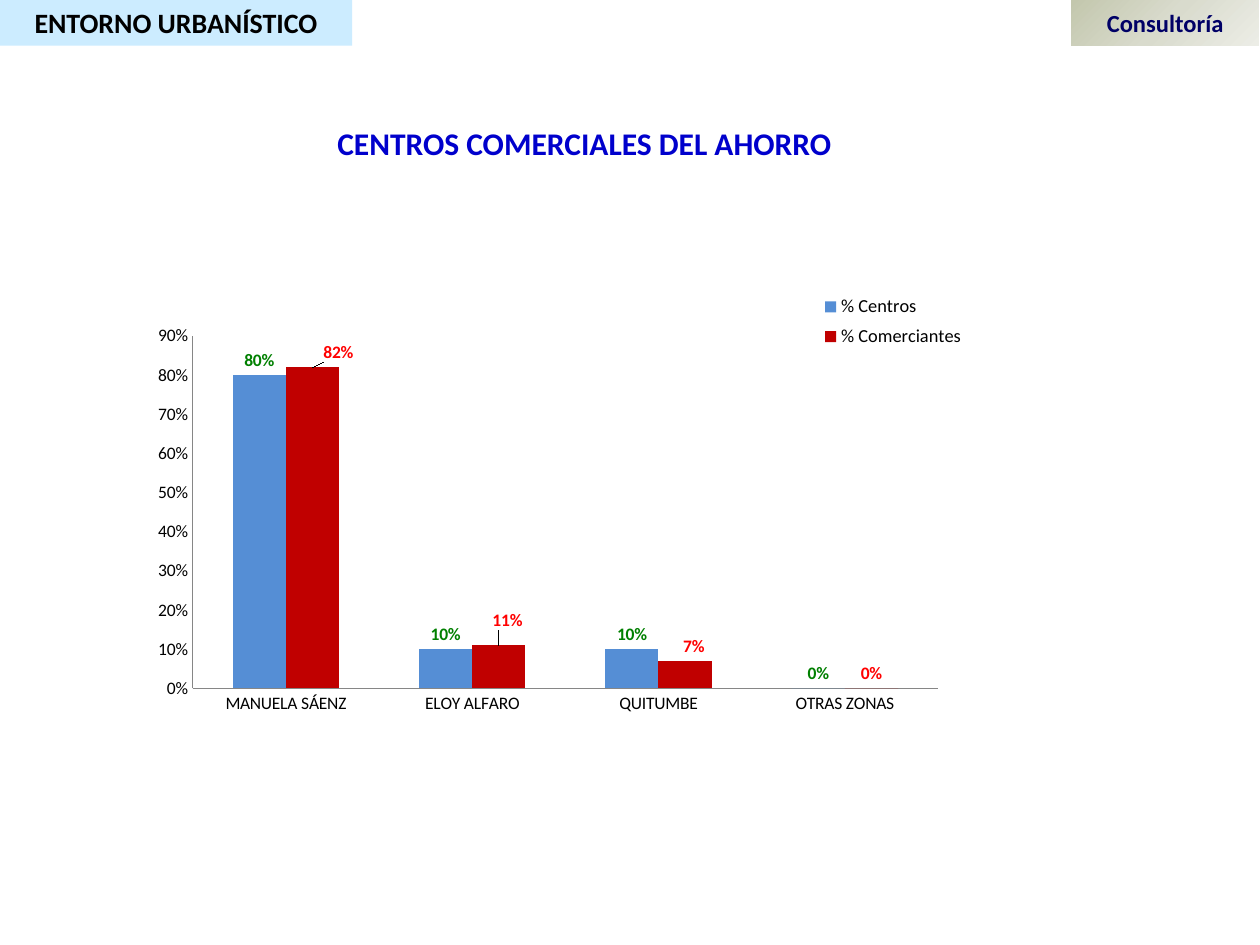
from lxml import etree
from pptx import Presentation, util as u
from pptx.chart.data import CategoryChartData
from pptx.dml.color import RGBColor
from pptx.enum import chart as charts, shapes, text
from pptx.oxml import parse_xml
from pptx.oxml.ns import qn

FONT = "Calibri"
CATEGORIES = ["MANUELA SÁENZ", "ELOY ALFARO", "QUITUMBE", "OTRAS ZONAS"]
SERIES = [
    ("% Centros", [0.8, 0.1, 0.1, 0], "558ED5", "008000"),
    ("% Comerciantes", [0.82, 0.11, 0.07, 0], "C00000", "FF0000"),
]
LABEL_OFFSETS = [(0.03, 0), (0.01, -0.02), (0.01, 0)]


def color(value):
    """Turn a hex string into a colour."""
    return RGBColor.from_string(value)


def style_font(font, size, value, bold=False):
    """Set the face, size, colour and weight of a font."""
    font.name, font.size, font.bold = FONT, u.Pt(size), bold
    font.color.rgb = color(value)


def place(shape, box):
    """Move a shape to a box given in centimetres."""
    shape.left, shape.top, shape.width, shape.height = map(u.Cm, box)


def write(shape, wording, size, value):
    """Write one bold centred line in the middle of a shape."""
    frame = shape.text_frame
    frame.word_wrap = True
    frame.auto_size = text.MSO_AUTO_SIZE.NONE
    frame.vertical_anchor = text.MSO_ANCHOR.MIDDLE
    paragraph = frame.paragraphs[0]
    paragraph.alignment = text.PP_ALIGN.CENTER
    run = paragraph.add_run()
    run.text = wording
    style_font(run.font, size, value, True)


def add_title(slide, box):
    """Place the heading in the title placeholder."""
    title = slide.shapes.title
    place(title, box)
    write(title, "CENTROS COMERCIALES DEL AHORRO", 18, "0000CC")


def add_banner(slide, box, wording, size, text_color, fill):
    """Add a borderless label along the top edge."""
    banner = slide.shapes.add_shape(shapes.MSO_SHAPE.RECTANGLE, *map(u.Cm, box))
    banner.shadow.inherit = False
    banner.fill.solid()
    banner.fill.fore_color.rgb = color(fill)
    banner.line.fill.background()
    write(banner, wording, size, text_color)
    return banner


def set_radial_gradient(shape, stops):
    """Replace the solid fill with a gradient spreading from the top left."""
    solid = shape.element.spPr.find(qn("a:solidFill"))
    marks = "".join(
        f'<a:gs pos="{position * 1000}"><a:srgbClr val="{value}"/></a:gs>'
        for position, value in stops
    )
    gradient = parse_xml(
        '<a:gradFill xmlns:a="http://schemas.openxmlformats.org/drawingml/2006/main">'
        f'<a:gsLst>{marks}</a:gsLst><a:path path="circle">'
        '<a:fillToRect r="100000" b="100000"/></a:path></a:gradFill>'
    )
    solid.getparent().replace(solid, gradient)


def set_layout(parent, index, **settings):
    """Give a chart part a manual layout."""
    for old in parent.findall(qn("c:layout")):
        parent.remove(old)
    layout = etree.Element(qn("c:layout"))
    manual = etree.SubElement(layout, qn("c:manualLayout"))
    for name, value in settings.items():
        etree.SubElement(manual, qn(f"c:{name}")).set("val", str(value))
    parent.insert(index, layout)


def style_axis(axis):
    """Give an axis a thin grey line without gridlines or ticks."""
    axis.has_major_gridlines = False
    axis.major_tick_mark = axis.minor_tick_mark = charts.XL_TICK_MARK.NONE
    axis.format.line.color.rgb = color("868686")
    axis.format.line.width = u.Pt(0.75)
    style_font(axis.tick_labels.font, 10, "000000")


def style_series(series, fill, label_color):
    """Colour the columns and their value labels."""
    series.format.fill.solid()
    series.format.fill.fore_color.rgb = color(fill)
    series.invert_if_negative = False
    labels = series.data_labels
    labels.show_value = True
    labels.number_format, labels.number_format_is_linked = "0%", False
    labels.position = charts.XL_LABEL_POSITION.OUTSIDE_END
    style_font(labels.font, 10, label_color, True)


def shift_labels(series, label_color):
    """Move the labels of the first columns away from their default places."""
    for index, (x, y) in enumerate(LABEL_OFFSETS):
        label = series.points[index].data_label
        style_font(label.font, 10, label_color, True)
        label.position = charts.XL_LABEL_POSITION.OUTSIDE_END
        element = series.data_labels._element.findall(qn("c:dLbl"))[index]
        set_layout(element, 1, x=x, y=y)
        number_format = etree.Element(qn("c:numFmt"), formatCode="0%", sourceLinked="0")
        element.insert(2, number_format)


def add_column_chart(slide, box):
    """Add the chart of centres and traders by zone."""
    data = CategoryChartData(number_format="0%")
    data.categories = CATEGORIES
    for name, values, _, _ in SERIES:
        data.add_series(name, values)
    kind = charts.XL_CHART_TYPE.COLUMN_CLUSTERED
    chart = slide.shapes.add_chart(kind, *map(u.Cm, box), data).chart
    chart.has_title = False
    style_font(chart.font, 10, "000000")

    plot = chart.plots[0]
    plot.gap_width, plot.overlap, plot.vary_by_categories = 150, 0, False
    for series, (_, _, fill, label_color) in zip(plot.series, SERIES):
        style_series(series, fill, label_color)
    shift_labels(plot.series[1], SERIES[1][3])

    style_axis(chart.category_axis)
    value_axis = chart.value_axis
    style_axis(value_axis)
    value_axis.minimum_scale, value_axis.maximum_scale = 0, 0.9
    value_axis.major_unit = 0.1
    value_axis.tick_labels.number_format = "0%"
    value_axis.tick_labels.number_format_is_linked = False

    chart.has_legend = True
    chart.legend.position = charts.XL_LEGEND_POSITION.RIGHT
    chart.legend.include_in_layout = False
    style_font(chart.legend.font, 10.5, "000000")
    edges = {"xMode": "edge", "yMode": "edge"}
    plot_area = chart.element.find(".//" + qn("c:plotArea"))
    legend = chart.element.find(".//" + qn("c:legend"))
    set_layout(plot_area, 0, layoutTarget="inner", **edges, x=0.066, y=0.15, w=0.866, h=0.738)
    set_layout(legend, 1, **edges, x=0.77, y=0.05, w=0.22, h=0.14)


def main():
    """Build and save the slide."""
    presentation = Presentation()
    presentation.slide_width, presentation.slide_height = u.Cm(25.4), u.Cm(19.05)
    slide = presentation.slides.add_slide(presentation.slide_layouts[5])
    add_title(slide, (5.38, 2.38, 12.8, 1.02))
    badge = add_banner(slide, (21.6, 0, 3.78, 0.92), "Consultoría", 14, "000066", "D9DBCD")
    set_radial_gradient(badge, [(0, "C3C7AD"), (50, "D9DBCD"), (100, "ECEDE6")])
    add_column_chart(slide, (2.74, 5.33, 17.35, 9.63))
    add_banner(slide, (0, 0, 7.1, 0.92), "ENTORNO URBANÍSTICO", 16, "000000", "CCECFF")
    presentation.save("out.pptx")


if __name__ == "__main__":
    main()
